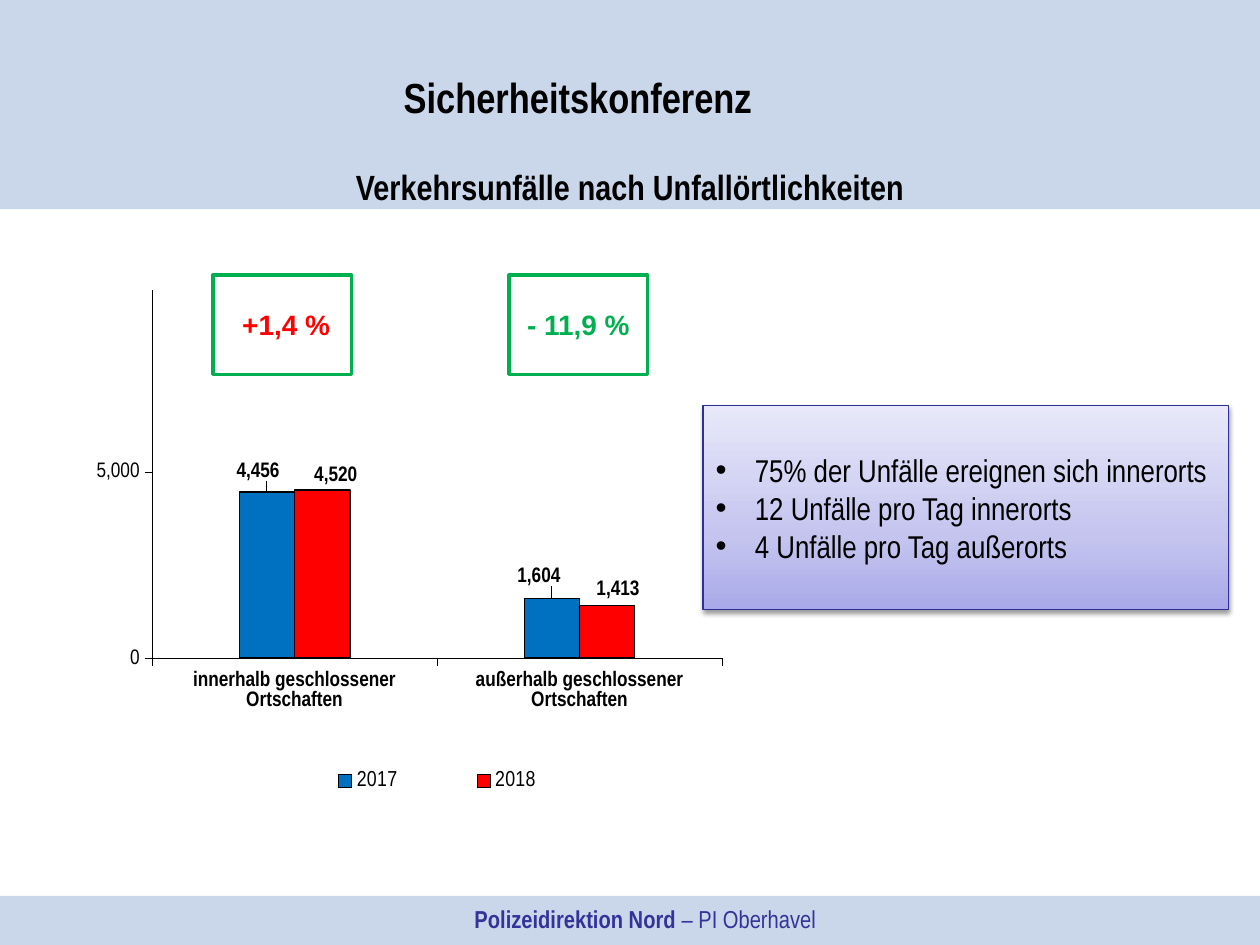
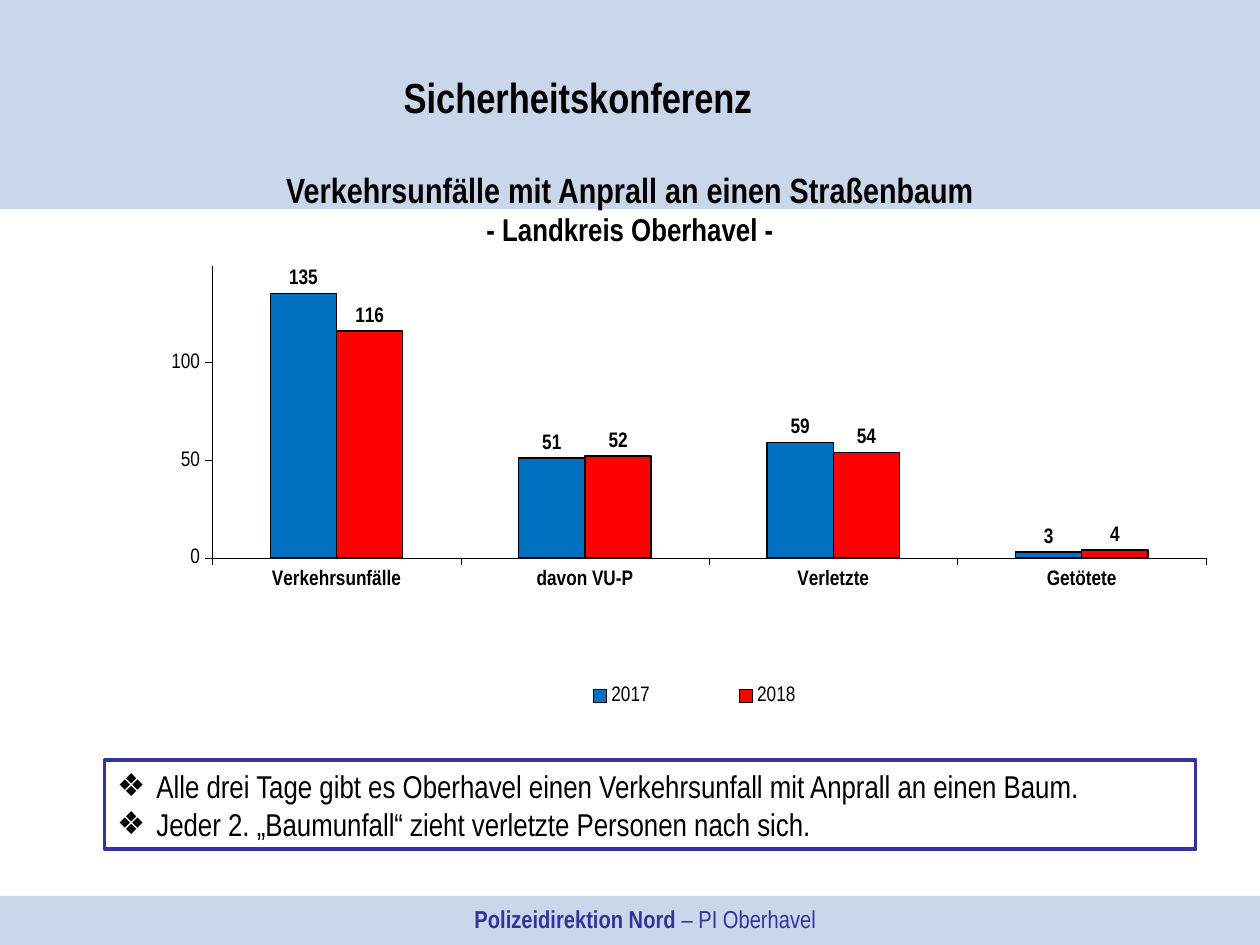
import copy

import pptx
import pptx.chart.data
import pptx.dml.color
import pptx.enum.chart
import pptx.enum.shapes
import pptx.enum.text
import pptx.oxml
import pptx.oxml.ns
import pptx.util

Pt = pptx.util.Pt
RGBColor = pptx.dml.color.RGBColor
ALIGN = pptx.enum.text.PP_ALIGN
ANCHOR = pptx.enum.text.MSO_ANCHOR
CHART = pptx.enum.chart

# Shared look
BLACK = RGBColor(0x00, 0x00, 0x00)
WHITE = RGBColor(0xFF, 0xFF, 0xFF)
BAND_BLUE = RGBColor(0x2E, 0x5D, 0xAD)
NAVY = RGBColor(0x33, 0x33, 0x99)
BOX_LINE = RGBColor(0x2F, 0x2F, 0x98)
GREEN = RGBColor(0x00, 0xB0, 0x50)
RED = RGBColor(0xFF, 0x00, 0x00)
BLUE = RGBColor(0x00, 0x70, 0xC0)
GRADIENT = [
    (0, RGBColor(0xA9, 0xA9, 0xE9)),
    (0.35, RGBColor(0xC4, 0xC4, 0xEF)),
    (1, RGBColor(0xE8, 0xE8, 0xFA)),
]
NARROW = "Arial Narrow"
SLIDE_SIZE = (720, 540)
HEADER_BAND = (0, 0, 723, 119.5)
FOOTER_BAND = (0, 512, 723, 28)
HEADING_BOX = (211, 37.4, 238.3, 36)
FOOTER_BOX = (178.6, 511.2, 380.2, 28)
BULLET_INDENT = 22.5
YEAR_COLORS = [BLUE, RED]


def points(box):
    return [Pt(length) for length in box]


def set_font(font, size, color=BLACK, bold=False, name=NARROW):
    for key, value in {"size": Pt(size), "bold": bold, "name": name}.items():
        setattr(font, key, value)
    font.color.rgb = color


def format_frame(frame, anchor, wrap=True, margin=None):
    values = {
        "word_wrap": wrap,
        "vertical_anchor": anchor,
        "auto_size": pptx.enum.text.MSO_AUTO_SIZE.NONE,
    }
    if margin is not None:
        for side in ("left", "top", "right", "bottom"):
            values["margin_" + side] = Pt(margin)
    for key, value in values.items():
        setattr(frame, key, value)


def write(para, spans, align=ALIGN.CENTER):
    """Each span is (text, font values)."""
    para.alignment = align
    for text, values in spans:
        span = para.add_run()
        span.text = text
        set_font(span.font, **values)


def add_element(parent, xml, index=None):
    element = pptx.oxml.parse_xml(xml)
    parent.insert(len(parent) if index is None else index, element)
    return element


def add_rectangle(page, box, line=None, width=0):
    shape = page.shapes.add_shape(
        pptx.enum.shapes.MSO_SHAPE.RECTANGLE, *points(box))
    shape.shadow.inherit = False
    shape.fill.background()
    if line is None:
        shape.line.fill.background()
    else:
        shape.line.color.rgb = line
        shape.line.width = Pt(width)
    return shape


def add_band(page, box):
    band = add_rectangle(page, box)
    band.fill.solid()
    band.fill.fore_color.rgb = BAND_BLUE
    color = band.element.xpath("./p:spPr/a:solidFill/a:srgbClr")[0]
    add_element(color, f'<a:alpha {pptx.oxml.ns.nsdecls("a")} val="25000"/>')


def add_text(page, box, spans, anchor=ANCHOR.TOP, margin=None):
    frame = page.shapes.add_textbox(*points(box)).text_frame
    format_frame(frame, anchor, margin=margin)
    write(frame.paragraphs[0], spans)


def add_frame(deck, title_lines, title_height):
    """Page with bands, heading, footer and title."""
    page = deck.slides.add_slide(deck.slide_layouts[5])
    for box in (FOOTER_BAND, HEADER_BAND):
        add_band(page, box)
    add_text(page, HEADING_BOX,
             [("Sicherheitskonferenz", {"size": 24, "bold": True})])
    footer = {"size": 14, "color": NAVY}
    add_text(page, FOOTER_BOX,
             [("Polizeidirektion Nord", {**footer, "bold": True}),
              (" – PI Oberhavel", footer)],
             ANCHOR.MIDDLE, margin=0)

    # The title lies in front of the header band
    title = page.shapes.title
    page.shapes.element.append(title.element)
    title.left, title.top, title.width, title.height = points(
        (0, 94.3, SLIDE_SIZE[0], title_height))
    frame = title.text_frame
    format_frame(frame, ANCHOR.BOTTOM)
    for number, (text, size) in enumerate(title_lines):
        para = frame.add_paragraph() if number else frame.paragraphs[0]
        write(para, [(text, {"size": size, "bold": True})])
    return page


def set_layout(parent, index, edges, target=False, mode=True):
    for old in parent.xpath("./c:layout"):
        parent.remove(old)
    parts = ['<c:layoutTarget val="inner"/>'] if target else []
    if mode:
        parts += ['<c:xMode val="edge"/>', '<c:yMode val="edge"/>']
    parts += [f'<c:{key} val="{value}"/>' for key, value in zip("xywh", edges)]
    add_element(parent, f'<c:layout {pptx.oxml.ns.nsdecls("c")}><c:manualLayout>'
                f'{"".join(parts)}</c:manualLayout></c:layout>', index)


def add_year_chart(page, box, categories, years, top, step, gap, plot_edges,
                   legend_edges, legend_size, line_width, axis_width,
                   label_shifts=None):
    data = pptx.chart.data.CategoryChartData(number_format="#,##0")
    data.categories = categories
    for name, values in years.items():
        data.add_series(name, values)
    chart = page.shapes.add_chart(
        CHART.XL_CHART_TYPE.COLUMN_CLUSTERED, *points(box), data).chart
    chart.has_title = False
    set_font(chart.font, 13.6, bold=True)

    # Axes
    value_axis, category_axis = chart.value_axis, chart.category_axis
    for axis, bold in ((value_axis, False), (category_axis, True)):
        axis.has_major_gridlines = False
        axis.major_tick_mark = CHART.XL_TICK_MARK.OUTSIDE
        axis.format.line.color.rgb = BLACK
        axis.format.line.width = Pt(axis_width)
        set_font(axis.tick_labels.font, 12, bold=bold)
    for key, value in {"minimum_scale": 0, "maximum_scale": top,
                       "major_unit": step}.items():
        setattr(value_axis, key, value)
    value_axis.tick_labels.number_format = "#,##0"
    value_axis.tick_labels.number_format_is_linked = False

    # Columns and their labels
    plot = chart.plots[0]
    for key, value in {"gap_width": gap, "overlap": 0,
                       "vary_by_categories": False}.items():
        setattr(plot, key, value)
    outside = CHART.XL_LABEL_POSITION.OUTSIDE_END
    for series, color in zip(plot.series, YEAR_COLORS):
        series.format.fill.solid()
        series.format.fill.fore_color.rgb = color
        series.format.line.color.rgb = BLACK
        series.format.line.width = Pt(line_width)
        labels = series.data_labels
        for key, value in {"show_value": True, "position": outside,
                           "number_format": "#,##0",
                           "number_format_is_linked": False}.items():
            setattr(labels, key, value)
        set_font(labels.font, 12, bold=True)
        for index in range(len(categories) if label_shifts else 0):
            label = series.points[index].data_label
            label.position = outside
            set_font(label.font, 12, bold=True)
    for label, shift in zip(chart.element.xpath(".//c:dLbl"), label_shifts or []):
        set_layout(label, 1, shift, mode=False)

    # Legend and plot area
    chart.has_legend = True
    chart.legend.position = CHART.XL_LEGEND_POSITION.BOTTOM
    chart.legend.include_in_layout = False
    set_font(chart.legend.font, legend_size)
    set_layout(chart.element.xpath(".//c:legend")[0], 1, legend_edges)
    set_layout(chart.element.xpath(".//c:plotArea")[0], 0, plot_edges, target=True)


def add_change_box(page, box, text, color):
    shape = add_rectangle(page, box, GREEN, 2)
    format_frame(shape.text_frame, ANCHOR.MIDDLE, wrap=False)
    values = {"size": 16, "color": color, "bold": True, "name": "Arial"}
    write(shape.text_frame.paragraphs[0], [(text, values)])


def add_bullet_box(page, box, lines, bullet, bullet_font, line, width):
    shape = add_rectangle(page, box, line, width)
    shape.fill.solid()
    shape.fill.fore_color.rgb = WHITE
    frame = shape.text_frame
    format_frame(frame, ANCHOR.MIDDLE)
    namespace = pptx.oxml.ns.nsdecls("a")
    for number, text in enumerate(lines):
        para = frame.add_paragraph() if number else frame.paragraphs[0]
        properties = para._p.get_or_add_pPr()
        properties.set("marL", str(Pt(BULLET_INDENT)))
        properties.set("indent", str(-Pt(BULLET_INDENT)))
        add_element(properties, f'<a:buFont {namespace} typeface="{bullet_font}"/>')
        add_element(properties, f'<a:buChar {namespace} char="{bullet}"/>')
        write(para, [(text, {"size": 18})], ALIGN.LEFT)
    return shape


def shade_box(shape):
    """Upward gradient and a soft shadow below."""
    shape.fill.gradient()
    shape.fill.gradient_angle = 90
    stop_list = shape.element.xpath(".//a:gsLst")[0]
    stop_list.append(copy.deepcopy(stop_list[0]))
    for stop, (position, color) in zip(shape.fill.gradient_stops, GRADIENT):
        stop.position = position
        stop.color.rgb = color
    add_element(
        shape.element.xpath("./p:spPr/a:effectLst")[0],
        f'<a:outerShdw {pptx.oxml.ns.nsdecls("a")} blurRad="{Pt(3.1)}" '
        f'dist="{Pt(1.6)}" dir="5400000" rotWithShape="0">'
        '<a:srgbClr val="000000"><a:alpha val="38000"/></a:srgbClr></a:outerShdw>')


def build_location_page(deck):
    page = add_frame(deck, [("Verkehrsunfälle nach Unfallörtlichkeiten", 20)], 28)
    add_year_chart(
        page, (31, 139.7, 391, 326.2),
        ["innerhalb geschlossener Ortschaften", "außerhalb geschlossener Ortschaften"],
        {"2017": (4456, 1604), "2018": (4520, 1413)},
        top=9900, step=5000, gap=317,
        plot_edges=(0.143, 0.079, 0.833, 0.646),
        legend_edges=(0.31, 0.91, 0.5, 0.06), legend_size=12.4,
        line_width=0.97, axis_width=0.25,
        label_shifts=[(-0.013, -0.01), (-0.019, -0.013), (0.02, 0), (0.016, -0.003)])
    changes = [(" +1,4 %", RED), ("- 11,9 %", GREEN)]
    for number, (text, color) in enumerate(changes):
        add_change_box(page, (121.7 + number * 169.2, 157, 79.2, 56.9), text, color)
    shade_box(add_bullet_box(
        page, (401.8, 231.8, 300.2, 116.6),
        ["75% der Unfälle ereignen sich innerorts",
         "12 Unfälle pro Tag innerorts",
         "4 Unfälle pro Tag außerorts"],
        "•", "Arial", BOX_LINE, 0.75))


def build_tree_page(deck):
    page = add_frame(
        deck, [("Verkehrsunfälle mit Anprall an einen Straßenbaum", 20),
               ("- Landkreis Oberhavel -", 18)], 51.1)
    add_year_chart(
        page, (53.3, 145.4, 636.5, 275.8),
        ["Verkehrsunfälle", "davon VU-P", "Verletzte", "Getötete"],
        {"2017": (135, 51, 59, 3), "2018": (116, 52, 54, 4)},
        top=149, step=50, gap=175,
        plot_edges=(0.107, 0.025, 0.892, 0.604),
        legend_edges=(0.375, 0.88, 0.33, 0.07), legend_size=12,
        line_width=0.75, axis_width=0.28)
    add_bullet_box(
        page, (59.8, 434.2, 623.5, 51.1),
        ["Alle drei Tage gibt es Oberhavel einen Verkehrsunfall mit Anprall an einen Baum.",
         "Jeder 2. „Baumunfall“ zieht verletzte Personen nach sich."],
        "❖", "Arial", NAVY, 2)


def main():
    deck = pptx.Presentation()
    deck.slide_width, deck.slide_height = points(SLIDE_SIZE)
    build_location_page(deck)
    build_tree_page(deck)
    deck.save("out.pptx")


if __name__ == "__main__":
    main()
